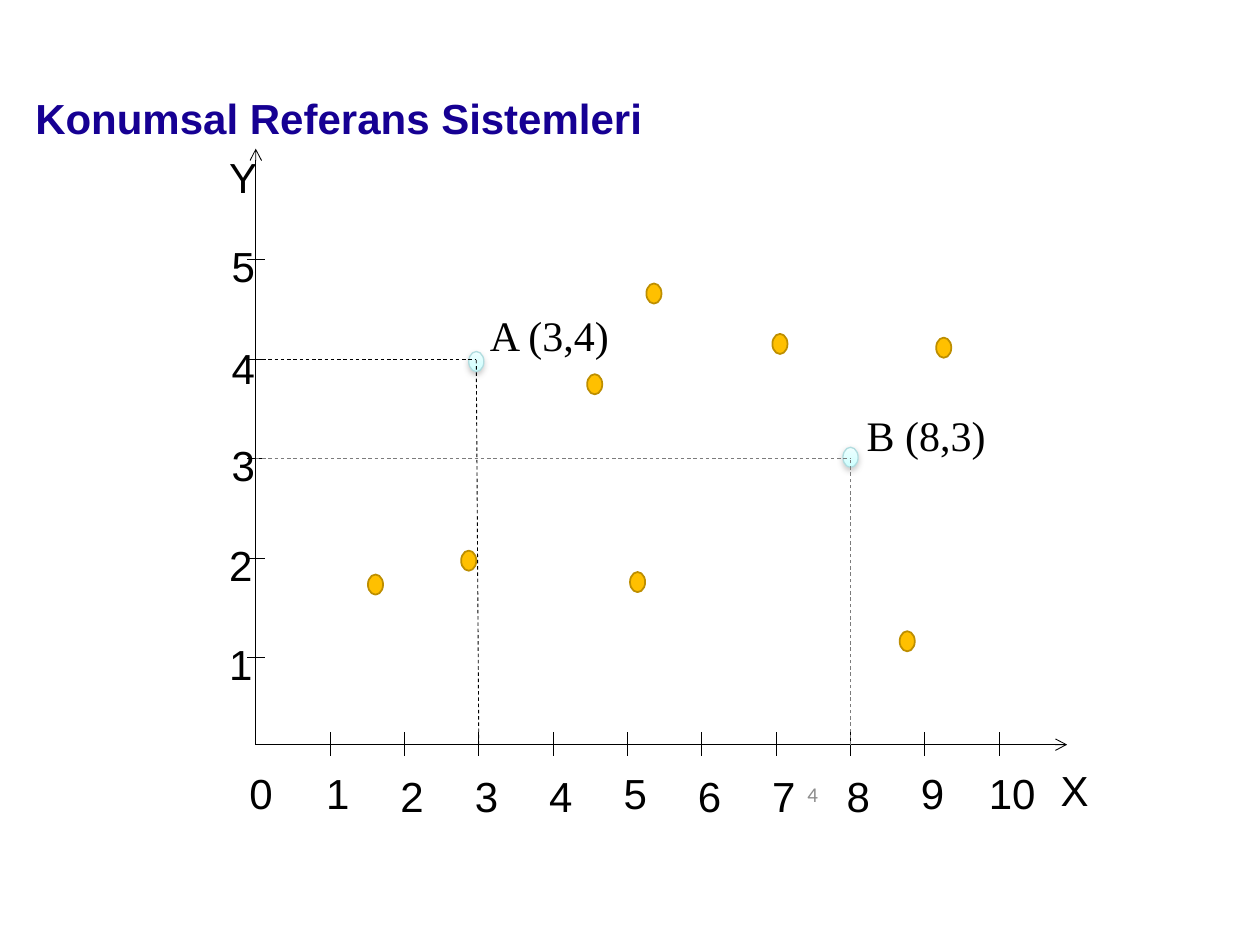
from copy import deepcopy

from lxml.etree import SubElement
from pptx import Presentation
from pptx.dml.color import RGBColor
from pptx.enum.dml import MSO_LINE
from pptx.enum.shapes import MSO_CONNECTOR, MSO_SHAPE
from pptx.enum.text import MSO_ANCHOR, MSO_AUTO_SIZE, PP_ALIGN
from pptx.oxml.ns import qn
from pptx.util import Inches, Pt

rgb = RGBColor.from_string

deck = Presentation()
deck.slide_width, deck.slide_height = Inches(10), Inches(7.5)
page = deck.slides.add_slide(deck.slide_layouts[5])


def add_line(x1, y1, x2, y2, color="000000", dashed=False, arrow=None):
    line = page.shapes.add_connector(
        MSO_CONNECTOR.STRAIGHT, Inches(x1), Inches(y1), Inches(x2), Inches(y2))
    line.line.color.rgb = rgb(color)
    line.line.width = Pt(0.5)
    if dashed:
        line.line.dash_style = MSO_LINE.DASH
    if arrow:
        SubElement(line.line._get_or_add_ln(), qn(f"a:{arrow}"), type="arrow")
    SubElement(line._element.spPr, qn("a:effectLst"))


def add_label(text, left, top, width=0.39, height=0.5, font="Arial", size=24, color="000000"):
    box = page.shapes.add_textbox(Inches(left), Inches(top), Inches(width), Inches(height))
    box.text_frame.word_wrap = False
    box.text_frame.auto_size = MSO_AUTO_SIZE.SHAPE_TO_FIT_TEXT
    para = box.text_frame.paragraphs[0]
    para.text = text
    para.font.name = font
    para.font.size = Pt(size)
    para.font.color.rgb = rgb(color)
    return box


title = page.shapes.title
title.left, title.top, title.width, title.height = map(Inches, (0.18, 0.73, 9.32, 0.32))
title.text_frame.auto_size = MSO_AUTO_SIZE.NONE
title.text_frame.vertical_anchor = MSO_ANCHOR.TOP
para = title.text_frame.paragraphs[0]
para.text = "Konumsal Referans Sistemleri"
para.alignment = PP_ALIGN.LEFT
para.line_spacing = 0.9
para.font.name = "Arial"
para.font.size = Pt(24)
para.font.bold = True
para.font.color.rgb = rgb("160093")

origin_x, origin_y, x_step, y_step = 2.03, 5.91, 0.59, 0.79
add_line(origin_x, 1.18, origin_x, origin_y, arrow="headEnd")
add_line(origin_x, origin_y, 8.47, origin_y, arrow="tailEnd")
add_label("X", 8.32, 6.02, 0.43)
add_label("Y", 1.72, 1.15, 0.43)

orange_points = [(5.13, 2.25), (5, 4.54), (3.66, 4.37), (6.13, 2.65), (7.14, 5.01),
                 (4.66, 2.97), (2.92, 4.56), (7.43, 2.68)]
named_points = [(3.72, 2.79), (6.69, 3.55)]
for left, top in orange_points + named_points:
    dot = page.shapes.add_shape(
        MSO_SHAPE.OVAL, Inches(left), Inches(top), Inches(0.12), Inches(0.16))
    dot.shadow.inherit = False
    if (left, top) in orange_points:
        dot.fill.solid()
        dot.fill.fore_color.rgb = rgb("FFC000")
        dot.line.color.rgb = rgb("BD8E00")
        dot.line.width = Pt(1)
        continue
    dot.fill.gradient()
    dot.fill.gradient_angle = 270
    stop_list = dot._element.spPr.find(qn("a:gradFill")).find(qn("a:gsLst"))
    stop_list.append(deepcopy(stop_list[-1]))
    for stop, position, color in zip(
            dot.fill.gradient_stops, (0, 0.65, 1), ("EFFFFF", "D9FFFF", "CBFFFF")):
        stop.position = position
        stop.color.rgb = rgb(color)
    dot.line.color.rgb = rgb("B0DCDF")
    dot.line.width = Pt(0.75)
    effects = dot._element.spPr.find(qn("a:effectLst"))
    shadow = SubElement(effects, qn("a:outerShdw"), blurRad=str(Pt(3.1)),
                        dist=str(Pt(1.6)), dir="5400000", rotWithShape="0")
    shade = SubElement(shadow, qn("a:srgbClr"), val="808080")
    SubElement(shade, qn("a:alpha"), val="38000")

add_label("A (3,4)", 3.79, 2.41, 1.16, font="Times New Roman")
add_label("B (8,3)", 6.78, 3.2, 1.16, font="Times New Roman")

add_label("0", 1.88, 6.04)
for number in range(1, 11):
    x = origin_x + number * x_step
    add_line(x, 5.81, x, 6)
    top = 6.04 if number in (1, 5, 9, 10) else 6.07
    if number < 10:
        add_label(str(number), x - 0.13, top)
    else:
        add_label(str(number), 7.75, top, 0.58)

for number in range(1, 6):
    y = 5.22 - (number - 1) * y_step
    add_line(2.1, y, 1.96, y)
    add_label(str(number), 1.72 if number < 3 else 1.74, 2.67 if number == 4 else y - 0.2)

for x, y, foot, color in [(3.78, 2.85, 3.8, "000000"), (6.75, 3.64, 6.75, "7C7C7C")]:
    add_line(origin_x, y, x, y, color, dashed=True)
    add_line(foot, origin_y, x, y, color, dashed=True)

page_number = add_label("4", 3.5, 6.15, 3.09, 0.17, "Calibri", 12, "8C8C8C")
page_number.text_frame.word_wrap = True
page_number.text_frame.auto_size = MSO_AUTO_SIZE.NONE
page_number.text_frame.paragraphs[0].alignment = PP_ALIGN.RIGHT

deck.save("out.pptx")
